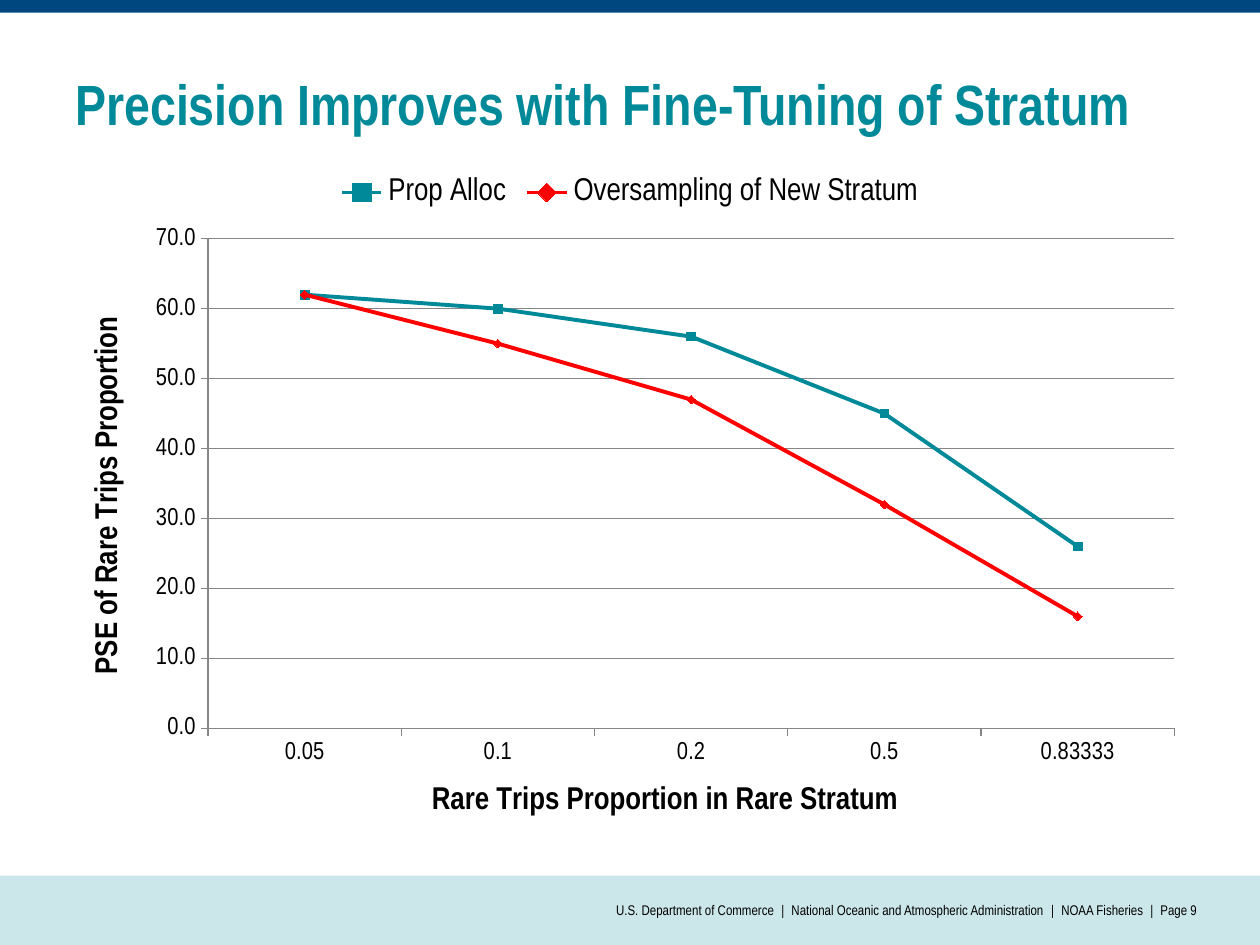
from dataclasses import dataclass

from pptx import Presentation
from pptx.chart.data import CategoryChartData
from pptx.dml.color import RGBColor
from pptx.enum.chart import XL_CHART_TYPE as CT, XL_LEGEND_POSITION as LP
from pptx.enum.chart import XL_MARKER_STYLE as MS, XL_TICK_MARK as TM
from pptx.enum.shapes import MSO_SHAPE as SH
from pptx.enum.text import MSO_ANCHOR as VA, PP_ALIGN as AL
from pptx.util import Inches, Pt


@dataclass(frozen=True)
class Theme:
    font: str = "Arial Narrow"
    teal: str = "008998"
    red: str = "FF0000"
    navy: str = "00467F"
    pale: str = "CCE7EA"
    grid: str = "868686"
    black: str = "000000"
    title: float = 32.4
    label: float = 18
    tick: float = 14
    base: float = 10
    footer: float = 8


class SlideBuilder:
    def __init__(self, slide, theme):
        self.s, self.t = slide, theme

    def style(self, font, size, color=None, bold=False):
        fmt = {"name": self.t.font, "size": Pt(size), "bold": bold}
        for key, value in fmt.items():
            setattr(font, key, value)
        font.color.rgb = RGBColor.from_string(color or self.t.black)

    def fill(self, fill, color):
        fill.solid()
        fill.fore_color.rgb = RGBColor.from_string(color)

    def line(self, line, color, width):
        line.color.rgb = RGBColor.from_string(color)
        line.width = Pt(width)

    def band(self, top, height, color):
        sp = self.s.shapes.add_shape(SH.RECTANGLE, 0, Inches(top), Inches(10), Inches(height))
        sp.shadow.inherit = False
        self.fill(sp.fill, color)
        sp.line.fill.background()

    def text(self, box, text, size, color=None, bold=False,
             align=AL.LEFT, anchor=VA.TOP, inset=0.1):
        tf = self.s.shapes.add_textbox(*map(Inches, box)).text_frame
        fmt = {"word_wrap": True, "vertical_anchor": anchor,
               "margin_left": Inches(inset), "margin_right": Inches(inset)}
        for key, value in fmt.items():
            setattr(tf, key, value)
        p = tf.paragraphs[0]
        p.alignment = align
        r = p.add_run()
        r.text = text
        self.style(r.font, size, color, bold)

    def axis(self, axis, title):
        tf = axis.axis_title.text_frame
        tf.text = title
        self.style(tf.paragraphs[0].runs[0].font, self.t.label, bold=True)
        self.style(axis.tick_labels.font, self.t.tick)
        axis.major_tick_mark, axis.minor_tick_mark = TM.OUTSIDE, TM.NONE
        self.line(axis.format.line, self.t.grid, 0.75)

    def line_chart(self, box, cats, series, cat_title, val_title):
        data = CategoryChartData(number_format="0.0")
        data.categories = cats
        for name, values, *_ in series:
            data.add_series(name, values)
        chart = self.s.shapes.add_chart(CT.LINE_MARKERS, *map(Inches, box), data).chart
        self.style(chart.font, self.t.base)
        chart.has_title = False
        chart.has_legend = True
        chart.legend.position = LP.TOP
        chart.legend.include_in_layout = False
        self.style(chart.legend.font, self.t.label)
        self.axis(chart.category_axis, cat_title)
        val = chart.value_axis
        self.axis(val, val_title)
        val.minimum_scale, val.maximum_scale, val.major_unit = 0, 70, 10
        val.has_major_gridlines = True
        self.line(val.major_gridlines.format.line, self.t.grid, 0.75)
        val.tick_labels.number_format = "0.0"
        val.tick_labels.number_format_is_linked = False
        plot = chart.plots[0]
        plot.vary_by_categories = False
        for ser, (_, _, color, marker) in zip(plot.series, series):
            ser.smooth = False
            self.line(ser.format.line, color, 2.25)
            ser.marker.style, ser.marker.size = marker, 5
            self.fill(ser.marker.format.fill, color)
            self.line(ser.marker.format.line, color, 0.75)


def main():
    prs = Presentation()
    prs.slide_width, prs.slide_height = Inches(10), Inches(7.5)
    t = Theme()
    b = SlideBuilder(prs.slides.add_slide(prs.slide_layouts[6]), t)
    b.band(6.95, 0.55, t.pale)
    b.band(0, 0.1, t.navy)
    b.text((0.5, 0.5, 9, 0.74), "Precision Improves with Fine-Tuning of Stratum",
           t.title, t.teal, bold=True)
    en_space = chr(0x2002)
    footer = ["U.S. Department of Commerce", "National Oceanic and Atmospheric Administration",
              "NOAA Fisheries", "Page 9"]
    b.text((2.5, 6.95, 7, 0.55), f"{en_space}|{en_space}".join(footer),
           t.footer, align=AL.RIGHT, anchor=VA.MIDDLE, inset=0)
    b.line_chart(
        (0.5, 1.29, 9, 5.43),
        ["0.05", "0.1", "0.2", "0.5", "0.83333"],
        [("Prop Alloc", (62, 60, 56, 45, 26), t.teal, MS.SQUARE),
         ("Oversampling of New Stratum", (62, 55, 47, 32, 16), t.red, MS.DIAMOND)],
        "Rare Trips Proportion in Rare Stratum",
        "PSE of Rare Trips Proportion")
    prs.save("out.pptx")


if __name__ == "__main__":
    main()
